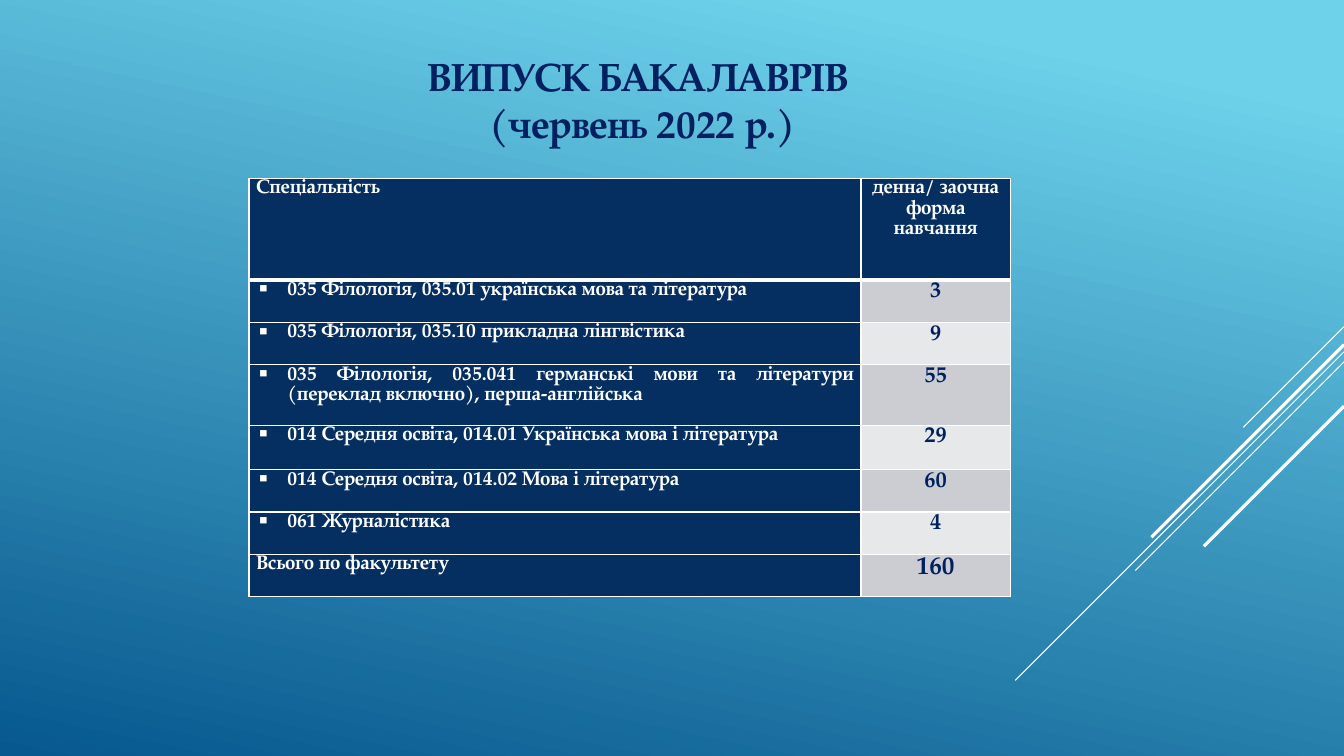
from lxml import etree
from pptx import Presentation
from pptx.dml.color import RGBColor
from pptx.enum.shapes import MSO_CONNECTOR
from pptx.enum.text import MSO_ANCHOR, MSO_AUTO_SIZE, PP_ALIGN
from pptx.oxml import parse_xml
from pptx.oxml.ns import nsdecls, qn
from pptx.util import Inches, Pt

LEFT, MID, JUST = PP_ALIGN.LEFT, PP_ALIGN.CENTER, PP_ALIGN.JUSTIFY
TOP, GROW = MSO_ANCHOR.TOP, MSO_AUTO_SIZE.SHAPE_TO_FIT_TEXT
LINE = MSO_CONNECTOR.STRAIGHT
FONT = "TeX Gyre Pagella"
WHITE, INK, NAVY = "FFFFFF", "002060", "052F61"
BANDS = ["CCCDD2", "E7E8EA"]
WIDE, HIGH = 13.33, 7.5


def paint(color, tone):
    color.rgb = RGBColor.from_string(tone)


def style(par, size, tone, align):
    par.alignment = align
    for run in par.runs:
        run.font.name = FONT
        run.font.size = Pt(size)
        run.font.bold = True
        paint(run.font.color, tone)


deck = Presentation()
deck.slide_width, deck.slide_height = Inches(WIDE), Inches(HIGH)
slide = deck.slides.add_slide(deck.slide_layouts[5])

back = slide.background.fill
back.gradient()
back.gradient_angle = 360 - 102
for stop, (pos, tone) in zip(back.gradient_stops, [(0.1, "6ED2EB"), (1, "06588E")]):
    stop.position = pos
    paint(stop.color, tone)

rays = [(3.24, 1, 0.75), (3.49, 3.26, 0.75), (3.59, 2.07, 0.75),
        (3.42, 1.91, 2.25), (4.03, 1.39, 2.25)]
for top, span, width in rays:
    ray = slide.shapes.add_connector(
        LINE, Inches(WIDE), Inches(top), Inches(WIDE - span), Inches(top + span))
    paint(ray.line.color, WHITE)
    ray.line.width = Pt(width)
    etree.SubElement(ray._element.spPr, qn("a:effectLst"))

title = slide.shapes.title
title.left, title.top = Inches(1.73), Inches(0.47)
title.width, title.height = Inches(9.29), Inches(1.51)
frame = title.text_frame
frame.text = "ВИПУСК БАКАЛАВРІВ \n(червень 2022 р.)"
frame.word_wrap = True
frame.auto_size = GROW
frame.vertical_anchor = TOP
for par in frame.paragraphs:
    style(par, 28, INK, MID)

rows = [
    ("Спеціальність", "денна/ заочна форма навчання", 1.01),
    ("035 Філологія, 035.01 українська мова та література", "3", 0.42),
    ("035 Філологія, 035.10 прикладна лінгвістика", "9", 0.42),
    ("035 Філологія, 035.041 германські мови та літератури "
     "(переклад включно), перша-англійська", "55", 0.6),
    ("014 Середня освіта, 014.01 Українська мова і література", "29", 0.44),
    ("014 Середня освіта, 014.02 Мова і література", "60", 0.42),
    ("061 Журналістика", "4", 0.42),
    ("Всього по факультету", "160", 0.42),
]
last = len(rows) - 1
grid = slide.shapes.add_table(
    len(rows), 2, Inches(2.47), Inches(1.77), Inches(7.55), Inches(4.14)).table
for col, width in zip(grid.columns, [6.07, 1.48]):
    col.width = Inches(width)

for r, (*texts, height) in enumerate(rows):
    grid.rows[r].height = Inches(height)
    for c, text in enumerate(texts):
        cell = grid.cell(r, c)
        cell.margin_left = cell.margin_right = Inches(0.07)
        cell.margin_top = cell.margin_bottom = 0
        cell.vertical_anchor = TOP
        cell.text_frame.text = text
        par = cell.text_frame.paragraphs[0]
        par.line_spacing = 1.07
        par.space_after = Pt(8)
        item = c == 0 and 0 < r < last
        if item:
            props = par._p.get_or_add_pPr()
            props.set("marL", str(Inches(0.31)))
            props.set("indent", str(-Inches(0.31)))
            etree.SubElement(props, qn("a:buChar"), char="▪")
        count = c == 1 and r > 0
        size = (18 if r == last else 16) if count else 14
        align = MID if c else JUST if item else LEFT
        style(par, size, INK if count else WHITE, align)

        edges = cell._tc.get_or_add_tcPr()
        for side in "LRTB":
            thick = 3 if (r, side) in [(0, "B"), (1, "T")] else 1
            edges.append(parse_xml(
                f'<a:ln{side} {nsdecls("a")} w="{Pt(thick)}"><a:solidFill>'
                f'<a:srgbClr val="{WHITE}"/></a:solidFill></a:ln{side}>'))
        cell.fill.solid()
        paint(cell.fill.fore_color, BANDS[(r - 1) % 2] if count else NAVY)

deck.save("out.pptx")
